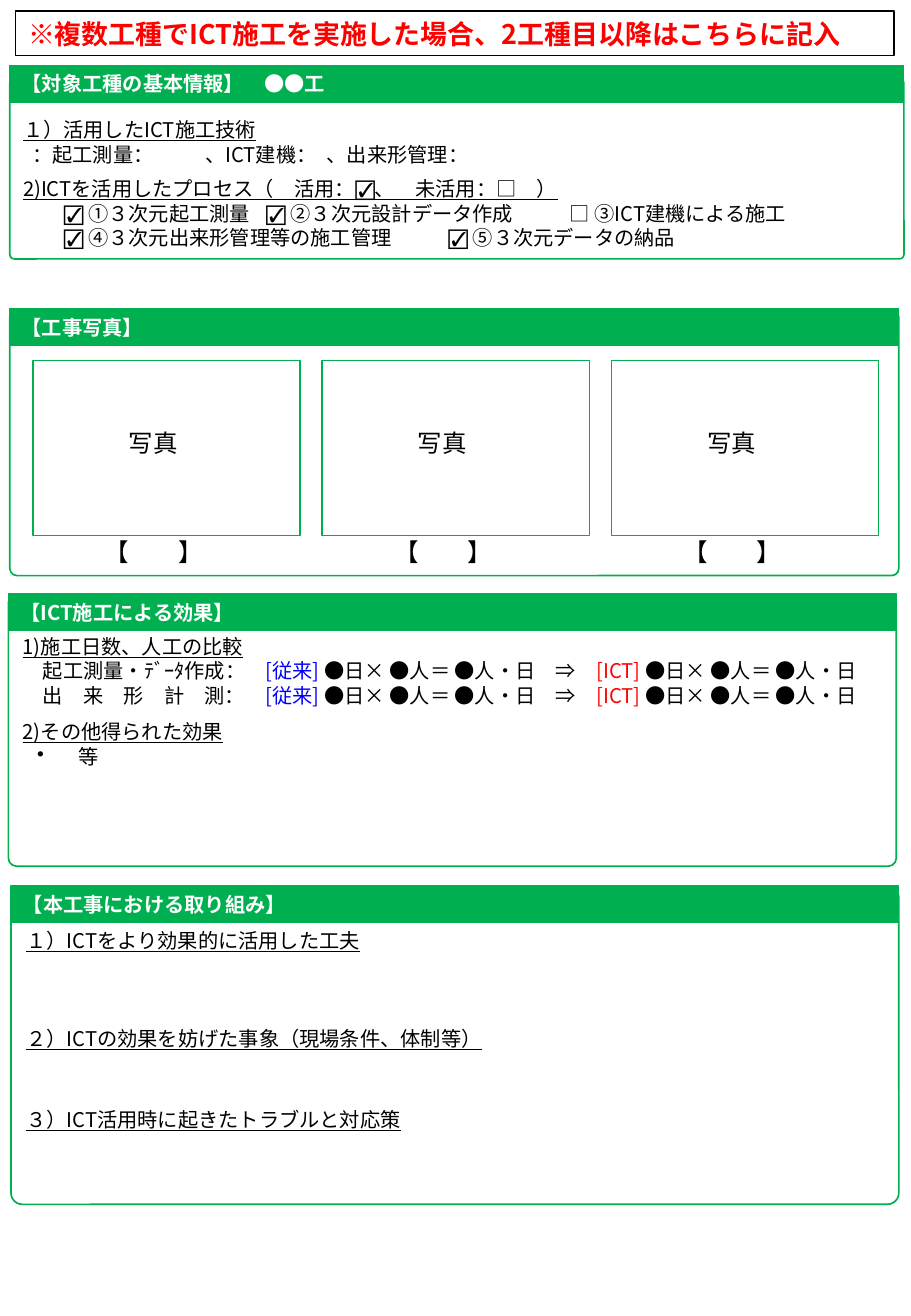
import dataclasses

import lxml.etree
import pptx
import pptx.dml.color
import pptx.enum.shapes
import pptx.enum.text
import pptx.oxml.ns
import pptx.util

Pt = pptx.util.Pt
qn = pptx.oxml.ns.qn
Shapes = pptx.enum.shapes.MSO_SHAPE
Align = pptx.enum.text.PP_ALIGN
Anchor = pptx.enum.text.MSO_ANCHOR


def colour(code):
    return pptx.dml.color.RGBColor.from_string(code)


@dataclasses.dataclass
class Report:
    """Holds the style of the report form and the slide being filled."""
    page: object
    font: str = "Noto Sans CJK JP"
    label_font: str = "Calibri"
    green: str = "00B050"
    white: str = "FFFFFF"
    black: str = "000000"
    blue: str = "0000FF"
    red: str = "FF0000"
    size: float = 12
    line_height: float = 14.5

    def place(self, box, left, top, width, height):
        box.left, box.top, box.width, box.height = map(Pt, (left, top, width, height))

    def paint(self, box, fill=None, line=None, weight=1):
        if fill:
            box.fill.solid()
            box.fill.fore_color.rgb = colour(fill)
        else:
            box.fill.background()
        if line:
            box.line.color.rgb = colour(line)
            box.line.width = Pt(weight)
        else:
            box.line.fill.background()

    def frame(self, box, anchor, top_inset=3.6):
        frame = box.text_frame
        frame.auto_size = pptx.enum.text.MSO_AUTO_SIZE.NONE
        frame.word_wrap = True
        frame.vertical_anchor = anchor
        frame.margin_left = frame.margin_right = Pt(7.2)
        frame.margin_top, frame.margin_bottom = Pt(top_inset), Pt(3.6)
        return frame

    def span(self, para, text, code=None, size=None, font=None, bold=False, underline=False):
        span = para.add_run()
        span.text = text
        span.font.size = Pt(size or self.size)
        span.font.bold = bold
        span.font.underline = underline
        span.font.color.rgb = colour(code or self.black)
        span.font.name = font or self.font
        east_asian = lxml.etree.SubElement(span.font._element, qn("a:ea"))
        east_asian.set("typeface", self.font)

    def shape(self, kind, area, fill=None, line=None, weight=1):
        box = self.page.shapes.add_shape(kind, *map(Pt, area))
        box.shadow.inherit = False
        self.paint(box, fill, line, weight)
        return box

    def title(self, area, text):
        box = self.page.shapes.title
        self.place(box, *area)
        self.paint(box, self.white, self.black, 0.75)
        para = self.frame(box, Anchor.MIDDLE).paragraphs[0]
        para.alignment = Align.LEFT
        self.span(para, text, self.red, 16, bold=True)

    def panel(self, area, radius, heading, header_top, top_inset=3.6):
        left, _, width, _ = area
        body = self.shape(Shapes.ROUNDED_RECTANGLE, area, line=self.green)
        body.adjustments[0] = radius
        header = self.shape(Shapes.RECTANGLE, (left, header_top, width, 21.6),
                            self.green, self.green, 0.75)
        para = self.frame(header, Anchor.MIDDLE).paragraphs[0]
        para.alignment = Align.LEFT
        self.span(para, heading, self.white, bold=True)
        return self.frame(body, Anchor.TOP, top_inset)

    def compose(self, frame, spans, after=0, margin=0, indent=0, tabs=(), bullet=None,
                underline=False):
        first = frame.paragraphs[0]
        para = frame.add_paragraph() if first.runs else first
        para.alignment = Align.LEFT
        para.line_spacing = Pt(self.line_height)
        para.space_after = Pt(after)
        settings = para._p.get_or_add_pPr()
        settings.set("marL", str(Pt(margin)))
        settings.set("indent", str(Pt(indent)))
        if bullet:
            lxml.etree.SubElement(settings, qn("a:buChar")).set("char", bullet)
        if tabs:
            stops = lxml.etree.SubElement(settings, qn("a:tabLst"))
            for position in tabs:
                stop = lxml.etree.SubElement(stops, qn("a:tab"))
                stop.set("pos", str(Pt(position)))
                stop.set("algn", "l")
        for text, code in spans:
            self.span(para, text, code, underline=underline)

    def line(self, frame, text, **layout):
        self.compose(frame, [(text, self.black)], **layout)

    def labour(self, frame, label, stop, after=0):
        amount = "●日× ●人＝ ●人・日"
        spans = [(label + "：\t", self.black), ("[従来]", self.blue),
                 (f" {amount}　⇒　", self.black), ("[ICT] ", self.red),
                 (amount, self.black)]
        self.compose(frame, spans, after, indent=12, tabs=[stop])

    def label(self, area, text):
        box = self.page.shapes.add_textbox(*map(Pt, area))
        para = self.frame(box, Anchor.MIDDLE).paragraphs[0]
        para.alignment = Align.CENTER
        self.span(para, text, size=14.5, font=self.label_font)

    def photo(self, left, top):
        self.shape(Shapes.RECTANGLE, (left, top, 158.4, 103.7), self.white, self.green)
        self.label((left - 40, top + 100.8, 223.2, 25.2), "【　　】")
        self.label((left + 20.5, top + 36, 101.5, 25.2), "写真")


def main():
    deck = pptx.Presentation()
    deck.slide_width, deck.slide_height = Pt(540), Pt(779.76)
    report = Report(deck.slides.add_slide(deck.slide_layouts[5]))
    report.title((9.4, 6.5, 520.6, 26.6),
                 "※複数工種でICT施工を実施した場合、2工種目以降はこちらに記入")

    basics = report.panel((5.8, 46.8, 530, 106.6), 0.024,
                          "【対象工種の基本情報】　●●工", 38.9, 22)
    report.line(basics, "１）活用したICT施工技術", underline=True)
    report.line(basics, "：起工測量：\t、ICT建機：\t、出来形管理：",
                after=6, indent=5.4, tabs=[112.5, 220.5])
    report.line(basics, "2)ICTを活用したプロセス（　活用：☑、　未活用：□　）", underline=True)
    report.line(basics, "☑ ①３次元起工測量\t☑ ②３次元設計データ作成\t□ ③ICT建機による施工",
                indent=24, tabs=[149, 310])
    report.line(basics, "☑ ④３次元出来形管理等の施工管理\t☑ ⑤３次元データの納品",
                indent=24, tabs=[233])

    report.panel((5.8, 183.6, 527, 157.5), 0.027, "【工事写真】", 183)
    for column in range(3):
        report.photo(19.6 + 171.4 * column, 213.6)

    effects = report.panel((5, 352, 526.3, 161.3), 0.03, "【ICT施工による効果】", 352, 22.3)
    report.line(effects, "1)施工日数、人工の比較", underline=True)
    report.labour(effects, "起工測量・ﾃﾞｰﾀ作成", 147)
    report.labour(effects, "出　来　形　計　測", 158.5, after=7)
    report.line(effects, "2)その他得られた効果", underline=True)
    report.line(effects, "　等", margin=21, indent=-12.5, bullet="•")

    efforts = report.panel((6.5, 525, 526.3, 188.6), 0.036, "【本工事における取り組み】", 525, 23)
    for text, after in (("１）ICTをより効果的に活用した工夫", 43.5),
                        ("２）ICTの効果を妨げた事象（現場条件、体制等）", 33.5),
                        ("３）ICT活用時に起きたトラブルと対応策", 0)):
        report.line(efforts, text, after=after, underline=True)

    deck.save("out.pptx")


if __name__ == "__main__":
    main()
